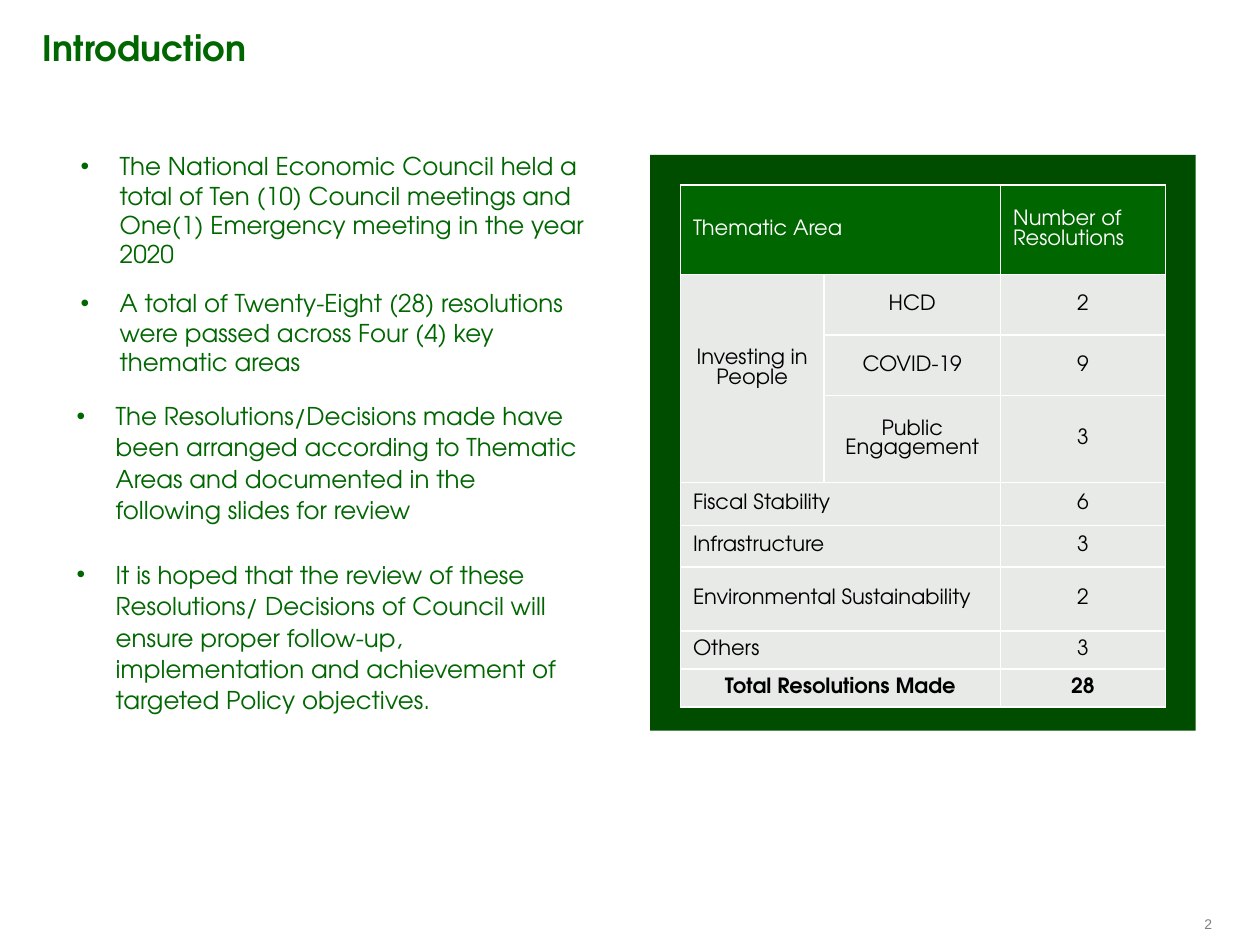
from lxml.etree import SubElement
from pptx import Presentation
from pptx.dml.color import RGBColor
from pptx.enum.shapes import MSO_SHAPE
from pptx.enum.text import MSO_ANCHOR, PP_ALIGN
from pptx.oxml.ns import qn
from pptx.util import Inches, Pt

FONT = "TeX Gyre Adventor"
GREEN = RGBColor(0x00, 0x66, 0x00)
DARK_GREEN = RGBColor(0x00, 0x4D, 0x00)
PALE = RGBColor(0xE7, 0xEA, 0xE7)
GRAY = RGBColor(0x80, 0x80, 0x80)
WHITE = RGBColor(0xFF, 0xFF, 0xFF)
BLACK = RGBColor(0x00, 0x00, 0x00)

TITLE = "Introduction"
SUMMARY = [
    "The National Economic Council held a total of Ten (10) Council meetings "
    "and One(1) Emergency meeting in the year 2020",
    "A total of Twenty-Eight (28) resolutions were passed across Four (4) key "
    "thematic areas",
]
ARRANGEMENT = [
    "The Resolutions/Decisions made have been arranged according to Thematic "
    "Areas and documented in the following slides for review",
]
OUTLOOK = [
    "It is hoped that the review of these Resolutions/ Decisions of Council "
    "will ensure proper follow-up, implementation and achievement of targeted "
    "Policy objectives.",
]

# (area, sub-area, number of resolutions); None marks a merged-away cell
ROWS = [
    ("Thematic Area", None, "Number of Resolutions"),
    ("Investing in People", "HCD", "2"),
    (None, "COVID-19", "9"),
    (None, "Public Engagement", "3"),
    ("Fiscal Stability", None, "6"),
    ("Infrastructure", None, "3"),
    ("Environmental Sustainability", None, "2"),
    ("Others", None, "3"),
    ("Total Resolutions Made", None, "28"),
]
COL_WIDTHS = [1.14, 1.4, 1.31]
ROW_HEIGHTS = [0.71, 0.48, 0.48, 0.69, 0.34, 0.33, 0.51, 0.3, 0.3]
PEOPLE_ROWS = (1, 3)
TOTAL_ROW = len(ROWS) - 1


def place(sp, left, top, width, height):
    sp.left, sp.top = Inches(left), Inches(top)
    sp.width, sp.height = Inches(width), Inches(height)


def set_font(p, size, color, bold=False, name=FONT):
    for r in p.runs:
        r.font.name = name
        r.font.size = Pt(size)
        r.font.bold = bold
        r.font.color.rgb = color


def clear_margins(tf):
    tf.margin_left = tf.margin_right = tf.margin_top = tf.margin_bottom = 0


def fill_bullets(sp, items, anchor, line_spacing, gap, after):
    tf = sp.text_frame
    tf.word_wrap = True
    tf.vertical_anchor = anchor
    tf.text = "\n".join(items)
    for i, p in enumerate(tf.paragraphs):
        p.line_spacing = line_spacing
        p.space_before = Pt(gap if i else 0)
        p.space_after = Pt(after)
        pPr = p._p.get_or_add_pPr()
        pPr.set("marL", str(Inches(0.31)))
        pPr.set("indent", str(-Inches(0.31)))
        SubElement(pPr, qn("a:buFont"), typeface="Arial")
        SubElement(pPr, qn("a:buChar"), char="•")
        set_font(p, 14, GREEN)


def set_borders(cell):
    tcPr = cell._tc.get_or_add_tcPr()
    for i, side in enumerate(["lnL", "lnR", "lnT", "lnB"]):
        ln = SubElement(tcPr, qn(f"a:{side}"), w=str(Pt(1)))
        fill = SubElement(ln, qn("a:solidFill"))
        SubElement(fill, qn("a:srgbClr"), val=str(WHITE))
        tcPr.insert(i, ln)


def add_resolutions_table(slide):
    table = slide.shapes.add_table(
        len(ROWS), len(COL_WIDTHS), Inches(5.4), Inches(1.47),
        Inches(sum(COL_WIDTHS)), Inches(sum(ROW_HEIGHTS))).table
    for col, width in zip(table.columns, COL_WIDTHS):
        col.width = Inches(width)
    for row, height in zip(table.rows, ROW_HEIGHTS):
        row.height = Inches(height)

    first, last = PEOPLE_ROWS
    people = table.cell(first, 0)
    people.merge(table.cell(last, 0))
    people.margin_bottom = Inches(0.21)
    for i, values in enumerate(ROWS):
        header, total = i == 0, i == TOTAL_ROW
        if values[1] is None:
            table.cell(i, 0).merge(table.cell(i, 1))
        for j, value in enumerate(values):
            cell = table.cell(i, j)
            cell.fill.solid()
            cell.fill.fore_color.rgb = GREEN if header else PALE
            set_borders(cell)
            if value is None:
                continue
            cell.vertical_anchor = MSO_ANCHOR.MIDDLE
            cell.text_frame.text = value
            p = cell.text_frame.paragraphs[0]
            centered = j > 0 or first <= i <= last or total
            p.alignment = (PP_ALIGN.CENTER if centered and not header
                           else PP_ALIGN.LEFT)
            set_font(p, 12, WHITE if header else BLACK, bold=total)


def main():
    prs = Presentation()
    prs.slide_width, prs.slide_height = Inches(10), Inches(7.5)
    slide = prs.slides.add_slide(prs.slide_layouts[1])
    shapes = slide.shapes

    title = shapes.title
    place(title, 0.34, 0.21, 9.62, 0.34)
    tf = title.text_frame
    tf.text = TITLE
    clear_margins(tf)
    tf.vertical_anchor = MSO_ANCHOR.TOP
    tf.paragraphs[0].alignment = PP_ALIGN.LEFT
    set_font(tf.paragraphs[0], 20, GREEN, bold=True)

    body = slide.placeholders[1]
    place(body, 0.54, 1.15, 4.2, 1.9)
    fill_bullets(body, SUMMARY, MSO_ANCHOR.TOP, 1.0, gap=11, after=0)
    for items, top, height in [(ARRANGEMENT, 3.12, 1.09),
                               (OUTLOOK, 4.38, 1.34)]:
        sp = shapes.add_textbox(Inches(0.51), Inches(top),
                                Inches(4.25), Inches(height))
        fill_bullets(sp, items, MSO_ANCHOR.MIDDLE, 1.07, gap=0, after=8)

    panel = shapes.add_shape(MSO_SHAPE.RECTANGLE, Inches(5.16), Inches(1.23),
                             Inches(4.33), Inches(4.57))
    panel.shadow.inherit = False
    panel.fill.solid()
    panel.fill.fore_color.rgb = DARK_GREEN
    panel.line.fill.background()
    add_resolutions_table(slide)

    number = shapes.add_textbox(Inches(9.56), Inches(7.26),
                                Inches(0.14), Inches(0.14))
    tf = number.text_frame
    tf.text = "2"
    clear_margins(tf)
    tf.word_wrap = False
    tf.vertical_anchor = MSO_ANCHOR.MIDDLE
    set_font(tf.paragraphs[0], 8, GRAY, name="Arial")

    prs.save("out.pptx")


if __name__ == "__main__":
    main()
